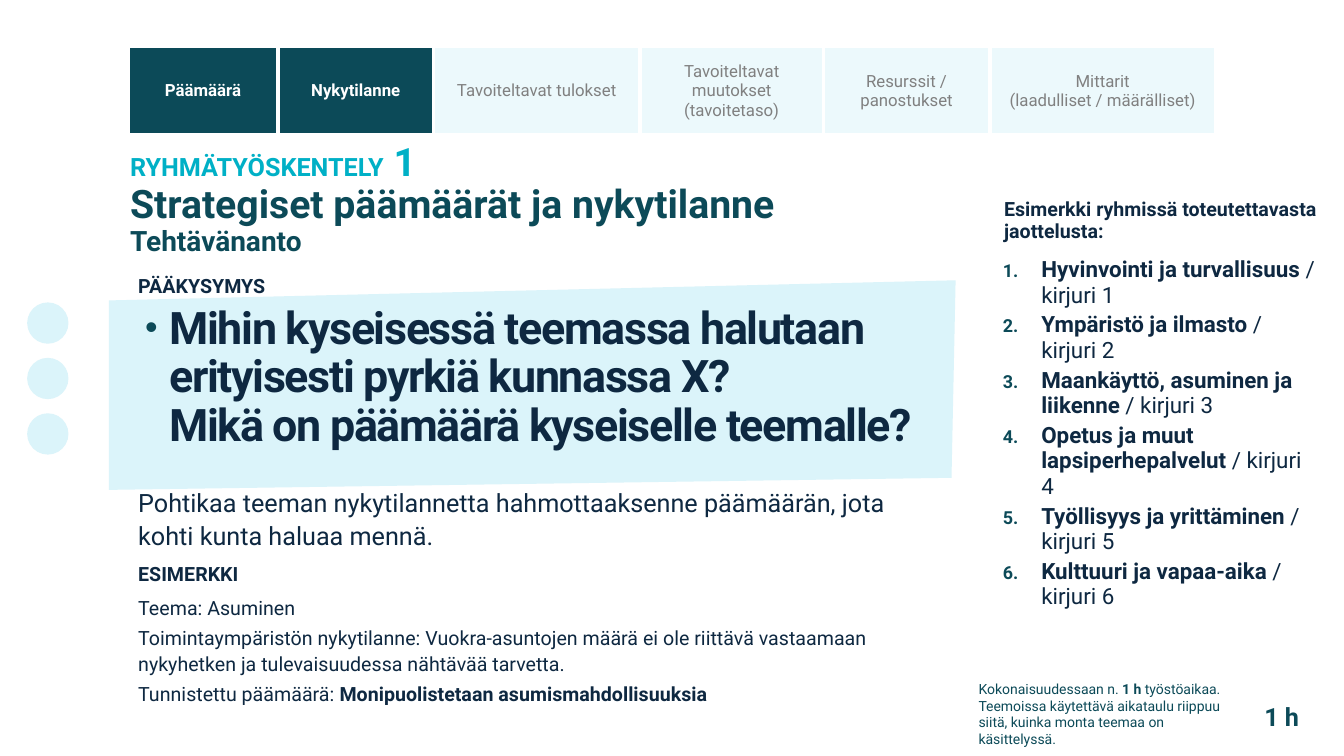
from copy import deepcopy

from lxml import etree
from pptx import Presentation
from pptx.dml.color import RGBColor
from pptx.enum.shapes import MSO_SHAPE
from pptx.enum.text import MSO_ANCHOR, MSO_AUTO_SIZE, PP_ALIGN
from pptx.oxml.ns import qn
from pptx.util import Pt

OVAL = MSO_SHAPE.OVAL
TOP, MIDDLE = MSO_ANCHOR.TOP, MSO_ANCHOR.MIDDLE
FIXED, GROW = MSO_AUTO_SIZE.NONE, MSO_AUTO_SIZE.SHAPE_TO_FIT_TEXT
LEFT, CENTER = PP_ALIGN.LEFT, PP_ALIGN.CENTER

TEAL = RGBColor(0x0C, 0x4A, 0x58)
CYAN = RGBColor(0x00, 0xB0, 0xC6)
NAVY = RGBColor(0x0E, 0x28, 0x41)
ICE = RGBColor(0xDB, 0xF4, 0xFA)
GREY = RGBColor(0x80, 0x80, 0x80)
WHITE = RGBColor(0xFF, 0xFF, 0xFF)
FONT = "Roboto"

STAGES = [
    ("Päämäärä", 107.3),
    ("Nykytilanne", 110.9),
    ("Tavoiteltavat tulokset", 147.6),
    ("Tavoiteltavat muutokset (tavoitetaso)", 131),
    ("Resurssit /\npanostukset", 118.8),
    ("Mittarit\n(laadulliset / määrälliset)", 161.3),
]
ACTIVE_STAGES = 2
BORDERS = [("a:lnL", 3), ("a:lnR", 3), ("a:lnT", 1), ("a:lnB", 3)]

THEMES = [
    ("Hyvinvointi ja turvallisuus", " /\nkirjuri 1"),
    ("Ympäristö ja ilmasto", " / kirjuri 2"),
    ("Maankäyttö, asuminen ja liikenne", " / kirjuri 3"),
    ("Opetus ja muut lapsiperhepalvelut", " / kirjuri 4"),
    ("Työllisyys ja yrittäminen", " / kirjuri 5"),
    ("Kulttuuri ja vapaa-aika", " / kirjuri 6"),
]


def sub(parent, tag, **attrs):
    return etree.SubElement(parent, qn(tag), attrs)


def add_text(p, text, size, color, bold=False, spacing=0):
    for i, line in enumerate(text.split("\n")):
        if i:
            p.add_line_break()
            p._p[-1].append(deepcopy(r._r.rPr))
        if not line:
            continue
        r = p.add_run()
        r.text = line
        r.font.name = FONT
        r.font.size = Pt(size)
        r.font.bold = bold
        r.font.color.rgb = color
        if spacing:
            r._r.rPr.set("spc", str(spacing * 100))


def add_paragraph(tf, line_spacing, before=0, indent=(5.8, 0), bullet=None):
    p = tf.paragraphs[0] if not tf.paragraphs[0].runs else tf.add_paragraph()
    pPr = p._p.get_or_add_pPr()
    pPr.set("marL", str(Pt(indent[0])))
    pPr.set("indent", str(Pt(indent[1])))
    if bullet:
        sub(sub(pPr, "a:buClr"), "a:srgbClr", val=str(TEAL))
        sub(pPr, "a:buSzPct", val="80000")
        tag, attrs = bullet
        sub(pPr, tag, **attrs)
    else:
        sub(pPr, "a:buNone")
    p.alignment = LEFT
    p.line_spacing = line_spacing
    p.space_before = Pt(before)
    p.space_after = Pt(0)
    return p


def place(sp, left, top, width, height, anchor):
    sp.left, sp.top, sp.width, sp.height = Pt(left), Pt(top), Pt(width), Pt(height)
    tf = sp.text_frame
    tf.auto_size = FIXED
    tf.word_wrap = True
    tf.vertical_anchor = anchor
    return tf


def paint(sp):
    sp.shadow.inherit = False
    sp.fill.solid()
    sp.fill.fore_color.rgb = ICE
    sp.line.fill.background()


def fill_title(sp):
    tf = place(sp, 85.7, 95.8, 868.3, 93.6, MIDDLE)
    p = add_paragraph(tf, 0.9, indent=(0, 0))
    add_text(p, "RYHMÄTYÖSKENTELY", 18, CYAN, True)
    add_text(p, " 1\n", 28, CYAN, True)
    add_text(p, "Strategiset päämäärät ja nykytilanne\n", 28, TEAL, True)
    add_text(p, "Tehtävänanto", 20, TEAL, True)


def add_band(s, behind):
    fb = s.shapes.build_freeform(Pt(77.8), Pt(214.6))
    corners = [(77.8, 349.9), (679.7, 341.3), (682.6, 200.2)]
    fb.add_line_segments([(Pt(x), Pt(y)) for x, y in corners])
    sp = fb.convert_to_shape()
    paint(sp)
    behind._element.addprevious(sp._element)


def fill_task(sp):
    tf = place(sp, 85.7, 190.1, 578.2, 367.9, TOP)
    add_text(add_paragraph(tf, 1.1), "PÄÄKYSYMYS", 14, NAVY, True)
    p = add_paragraph(tf, 0.9, 6, (28.1, -17.3), ("a:buChar", {"char": "•"}))
    add_text(p, "Mihin kyseisessä teemassa halutaan erityisesti pyrkiä kunnassa X?\n"
             "Mikä on päämäärä kyseiselle teemalle?", 32, NAVY, True, -1)
    add_text(add_paragraph(tf, 1.1, 24),
             "Pohtikaa teeman nykytilannetta hahmottaaksenne päämäärän, "
             "jota kohti kunta haluaa mennä.", 18, NAVY)
    add_text(add_paragraph(tf, 1.1, 6), "ESIMERKKI", 14, NAVY, True)
    add_text(add_paragraph(tf, 1.1, 6), "Teema: Asuminen", 14, NAVY)
    add_text(add_paragraph(tf, 1.1, 3),
             "Toimintaympäristön nykytilanne: Vuokra-asuntojen määrä ei ole riittävä "
             "vastaamaan nykyhetken ja tulevaisuudessa nähtävää tarvetta.", 14, NAVY)
    p = add_paragraph(tf, 1.1, 3)
    add_text(p, "Tunnistettu päämäärä: ", 14, NAVY)
    add_text(p, "Monipuolistetaan asumismahdollisuuksia", 14, NAVY, True)


def fill_themes(sp):
    tf = place(sp, 704.2, 138.2, 244.1, 323.3, TOP)
    add_text(add_paragraph(tf, 0.95),
             "Esimerkki ryhmissä toteutettavasta jaottelusta:", 14, NAVY, True)
    number = ("a:buAutoNum", {"type": "arabicPeriod"})
    for i, (theme, writer) in enumerate(THEMES):
        p = add_paragraph(tf, 0.95, 3 if i else 10, (32.4, -27.4), number)
        add_text(p, theme, 16, NAVY, True)
        add_text(p, writer, 16, NAVY)


def add_label(s, left, top, width, height, runs, size, align, wrap):
    sp = s.shapes.add_textbox(Pt(left), Pt(top), Pt(width), Pt(height))
    tf = sp.text_frame
    tf.word_wrap = wrap
    tf.auto_size = GROW
    p = tf.paragraphs[0]
    p.alignment = align
    for text, bold in runs:
        add_text(p, text, size, TEAL, bold)


def format_stage(cell, text, active):
    cell.vertical_anchor = MIDDLE
    p = cell.text_frame.paragraphs[0]
    p.alignment = CENTER
    add_text(p, text, 12, WHITE if active else GREY, active)
    tcPr = cell._tc.get_or_add_tcPr()
    for tag, width in BORDERS:
        ln = sub(tcPr, tag, w=str(Pt(width)))
        sub(sub(ln, "a:solidFill"), "a:srgbClr", val=str(WHITE))
    cell.fill.solid()
    cell.fill.fore_color.rgb = TEAL if active else ICE
    if not active:
        sub(tcPr.find(qn("a:solidFill"))[0], "a:alpha", val="50000")


def add_stages(s):
    width = sum(w for _, w in STAGES)
    frame = s.shapes.add_table(1, len(STAGES), Pt(91.4), Pt(33.8), Pt(width), Pt(62.6))
    table = frame.table
    table.first_row = table.horz_banding = False
    for i, (text, w) in enumerate(STAGES):
        table.columns[i].width = Pt(w)
        format_stage(table.cell(0, i), text, i < ACTIVE_STAGES)


def add_dots(s):
    group = s.shapes.add_group_shape()
    for i in range(3):
        paint(group.shapes.add_shape(OVAL, Pt(19.4), Pt(216 + 39.6 * i), Pt(29.5), Pt(29.5)))


def main():
    prs = Presentation()
    prs.slide_width, prs.slide_height = Pt(960), Pt(540)
    s = prs.slides.add_slide(prs.slide_layouts[3])
    title, task, themes = s.placeholders
    fill_title(title)
    add_band(s, task)
    fill_task(task)
    fill_themes(themes)
    note = [("Kokonaisuudessaan n. ", False), ("1 h", True),
            (" työstöaikaa. Teemoissa käytettävä aikataulu riippuu siitä, "
             "kuinka monta teemaa on käsittelyssä.", False)]
    add_label(s, 691.9, 482.4, 203.8, 43.9, note, 10, LEFT, True)
    add_stages(s)
    add_label(s, 895.7, 497.5, 39.6, 28.8, [("1 h", True)], 18, CENTER, False)
    add_dots(s)
    prs.save("out.pptx")


if __name__ == "__main__":
    main()
